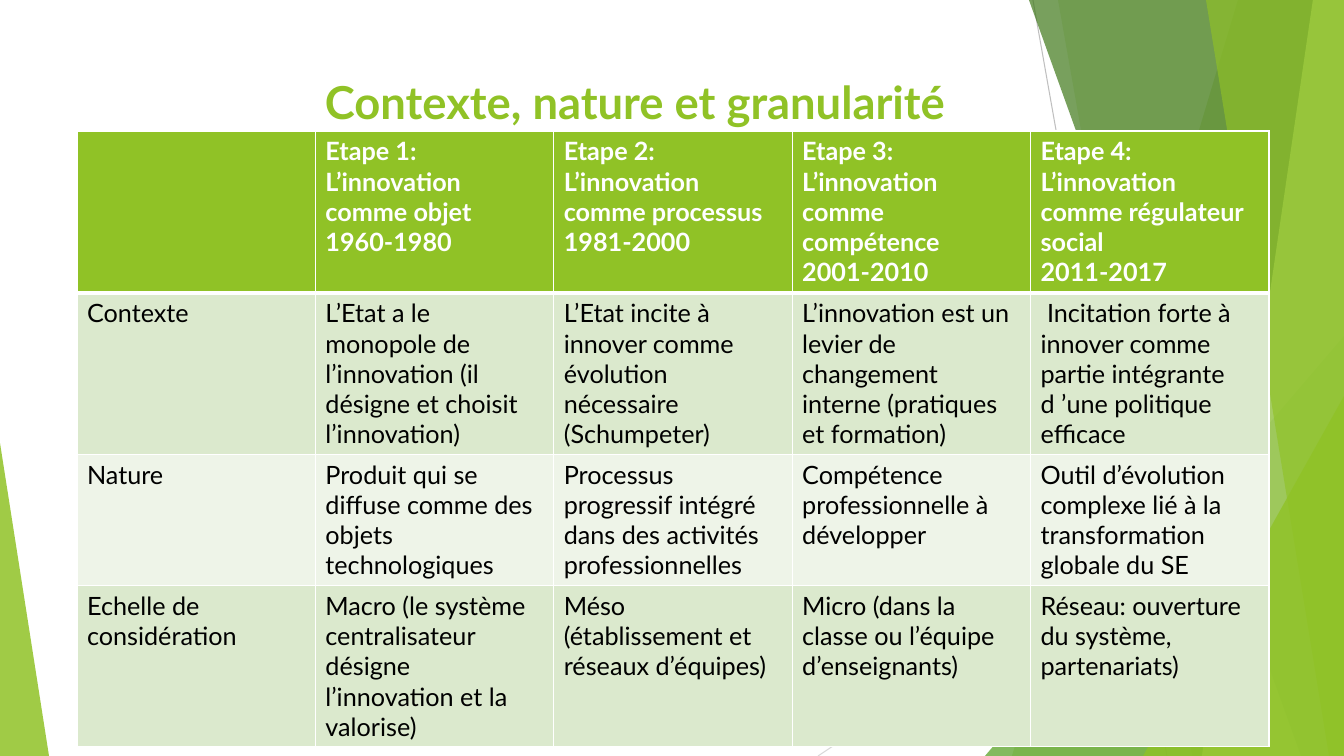
from dataclasses import dataclass

from lxml import etree
from pptx import Presentation
from pptx.dml.color import RGBColor
from pptx.enum.shapes import MSO_CONNECTOR, MSO_SHAPE
from pptx.enum.text import MSO_ANCHOR, PP_ALIGN
from pptx.oxml.ns import qn
from pptx.util import Pt

PX = 914400 / 100.8
STRAIGHT = MSO_CONNECTOR.STRAIGHT
TRIANGLE = MSO_SHAPE.ISOSCELES_TRIANGLE
TOP, CENTER = MSO_ANCHOR.TOP, PP_ALIGN.CENTER
WIDTH, HEIGHT = 1344, 756


@dataclass(frozen=True)
class Theme:
    """Colours, font and type sizes of the slide."""
    font: str = "Lato"
    title_size: float = 32.4
    table_size: float = 18
    green: str = "90C226"
    leaf: str = "54A021"
    forest: str = "3F7819"
    lime: str = "C0E474"
    band_dark: str = "DBE9CD"
    band_light: str = "EEF4E8"
    white: str = "FFFFFF"
    black: str = "000000"
    ray_dark: str = "BFBFBF"
    ray_light: str = "D9D9D9"


THEME = Theme()


def emu(*pixels):
    """Turn pixel lengths into a list of EMU lengths."""
    return [round(p * PX) for p in pixels]


def style_text(frame, size, color, bold):
    """Apply the theme font to every paragraph of a text frame."""
    formats = {"name": THEME.font, "size": Pt(size), "bold": bold}
    for paragraph in frame.paragraphs:
        for attribute, value in formats.items():
            setattr(paragraph.font, attribute, value)
        paragraph.font.color.rgb = RGBColor.from_string(color)


deck = Presentation()
deck.slide_width, deck.slide_height = emu(WIDTH, HEIGHT)
slide = deck.slides.add_slide(deck.slide_layouts[6])
shapes = slide.shapes

# Thin rays behind the facets
for ends, color in [((1033, 0, 1167, HEIGHT), THEME.ray_dark),
                    ((WIDTH, 406, 818, HEIGHT), THEME.ray_light)]:
    ray = shapes.add_connector(STRAIGHT, *emu(*ends))
    ray.line.color.rgb = RGBColor.from_string(color)
    ray.line.width = Pt(0.75)
    etree.SubElement(ray._element.spPr, qn("a:effectLst"))

# Facets in stacking order. A band runs along the right edge from its top x
# to its bottom x; a triangle has its left, top, width and apex position.
facets = [
    ("band", (1238, 1012), THEME.green, 30),
    ("band", (1058, 1192), THEME.green, 20),
    ("triangle", (985, 336, 359, 1), THEME.leaf, 72),
    ("band", (1029, 1301), THEME.forest, 70),
    ("band", (1313, 1202), THEME.lime, 70),
    ("band", (1206, 1329), THEME.green, 65),
    ("triangle", (1143, 396, 201, 1), THEME.green, 80),
    ("triangle", (0, 443, 49, 0), THEME.green, 85),
]
for kind, place, color, opacity in facets:
    if kind == "band":
        top_x, bottom_x = place
        outline = shapes.build_freeform(*emu(top_x, 0))
        corners = [(WIDTH, 0), (WIDTH, HEIGHT), (bottom_x, HEIGHT)]
        outline.add_line_segments([emu(*corner) for corner in corners])
        facet = outline.convert_to_shape()
    else:
        left, top, width, apex = place
        facet = shapes.add_shape(TRIANGLE, *emu(left, top, width, HEIGHT - top))
        facet.adjustments[0] = apex
    facet.shadow.inherit = False
    facet.line.fill.background()
    facet.fill.solid()
    facet.fill.fore_color.rgb = RGBColor.from_string(color)
    tint = facet._element.spPr.find(".//" + qn("a:srgbClr"))
    etree.SubElement(tint, qn("a:alpha"), val=str(opacity * 1000))

heading = shapes.add_textbox(*emu(77, 69, 1116, 53)).text_frame
heading.word_wrap = True
heading.vertical_anchor = TOP
heading.text = "Contexte, nature et granularité"
heading.paragraphs[0].alignment = CENTER
style_text(heading, THEME.title_size, THEME.green, True)

stages = [
    ["",
     "Etape 1: L’innovation comme objet\n1960-1980",
     "Etape 2: L’innovation comme processus\n1981-2000",
     "Etape 3:\nL’innovation comme compétence\n2001-2010",
     "Etape 4: L’innovation comme régulateur social\n2011-2017"],
    ["Contexte",
     "L’Etat a le monopole de l’innovation (il désigne et choisit l’innovation)",
     "L’Etat incite à innover comme évolution nécessaire (Schumpeter)",
     "L’innovation est un levier de changement interne (pratiques et formation)",
     " Incitation forte à innover comme partie intégrante "
     "d\u00a0’une politique efficace"],
    ["Nature",
     "Produit qui se diffuse comme des objets technologiques",
     "Processus progressif intégré dans des activités professionnelles",
     "Compétence professionnelle à développer",
     "Outil d’évolution complexe lié à la transformation globale du SE"],
    ["Echelle de considération",
     "Macro (le système centralisateur désigne l’innovation et la valorise)",
     "Méso (établissement et réseaux d’équipes)",
     "Micro (dans la classe ou l’équipe d’enseignants)",
     "Réseau: ouverture du système, partenariats)"],
]
row_heights = [162, 161, 131, 161]
row_fills = [THEME.green, THEME.band_dark, THEME.band_light, THEME.band_dark]
table_width = 1192
table = shapes.add_table(len(stages), len(stages[0]),
                         *emu(77, 131, table_width, sum(row_heights))).table
for column in table.columns:
    column.width = emu(table_width / len(stages[0]))[0]

for r, texts in enumerate(stages):
    table.rows[r].height = emu(row_heights[r])[0]
    is_header = r == 0
    borders = {"a:lnL": 1, "a:lnR": 1,
               "a:lnT": 3 if r == 1 else 1, "a:lnB": 3 if is_header else 1}
    for c, text in enumerate(texts):
        cell = table.cell(r, c)
        cell.text_frame.text = text
        style_text(cell.text_frame, THEME.table_size,
                   THEME.white if is_header else THEME.black, is_header)
        cell.fill.solid()
        cell.fill.fore_color.rgb = RGBColor.from_string(row_fills[r])
        properties = cell._tc.get_or_add_tcPr()
        for position, (side, points) in enumerate(borders.items()):
            border = etree.Element(qn(side), w=str(Pt(points)))
            paint = etree.SubElement(border, qn("a:solidFill"))
            etree.SubElement(paint, qn("a:srgbClr"), val=THEME.white)
            properties.insert(position, border)

deck.save("out.pptx")
